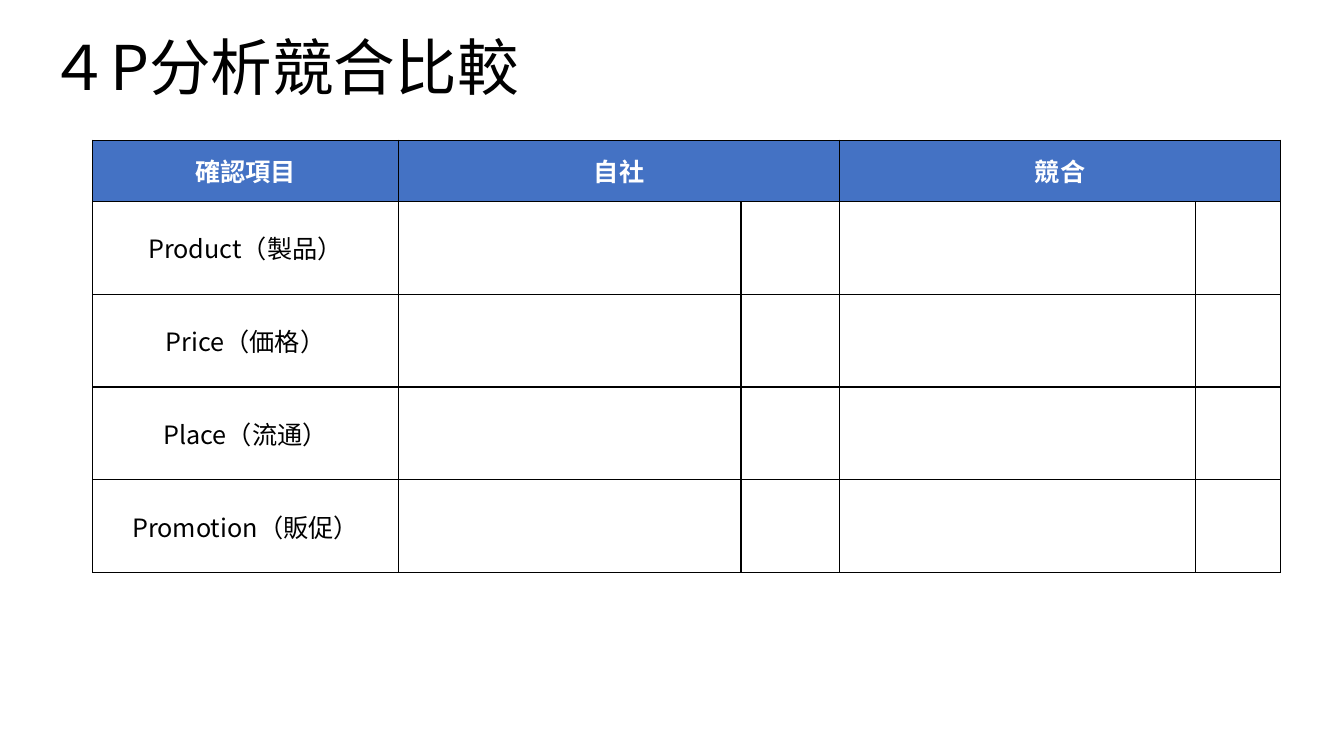
from pptx import Presentation
from pptx.dml.color import RGBColor
from pptx.enum.text import MSO_ANCHOR, PP_ALIGN
from pptx.oxml.ns import qn
from pptx.util import Inches, Pt
from lxml.etree import SubElement

FONT = "Noto Sans CJK JP"
BLACK = RGBColor(0x00, 0x00, 0x00)
WHITE = RGBColor(0xFF, 0xFF, 0xFF)
BLUE = RGBColor(0x44, 0x72, 0xC4)

COLUMN_WIDTHS = [3.03, 3.4, 0.98, 3.53, 0.84]
HEADER_HEIGHT = 0.61
ROW_HEIGHT = 0.92
HEADINGS = {0: "確認項目", 1: "自社", 3: "競合"}
FOUR_PS = ["Product（製品）", "Price（価格）", "Place（流通）", "Promotion（販促）"]


def write_text(frame, text, size=18, color=BLACK, bold=False,
               align=PP_ALIGN.CENTER, line_spacing=None):
    paragraph = frame.paragraphs[0]
    paragraph.alignment = align
    paragraph.line_spacing = line_spacing
    run = paragraph.add_run()
    run.text = text
    run.font.size = Pt(size)
    run.font.bold = bold
    run.font.color.rgb = color
    run.font.name = FONT
    # Japanese characters take the East Asian typeface
    SubElement(run.font._element, qn("a:ea"), typeface=FONT)


def add_title(slide, text):
    title = slide.shapes.title
    title.left, title.top = Inches(0.38), Inches(0.15)
    title.width, title.height = Inches(11.5), Inches(1.1)
    title.text_frame.vertical_anchor = MSO_ANCHOR.MIDDLE
    write_text(title.text_frame, text, size=44, align=PP_ALIGN.LEFT,
               line_spacing=0.9)


def format_cell(cell, fill):
    properties = cell._tc.get_or_add_tcPr()
    for side in ("lnL", "lnR", "lnT", "lnB"):
        border = SubElement(properties, qn(f"a:{side}"), w=str(Pt(1)))
        line_fill = SubElement(border, qn("a:solidFill"))
        SubElement(line_fill, qn("a:srgbClr"), val=str(BLACK))
    cell.fill.solid()
    cell.fill.fore_color.rgb = fill
    cell.vertical_anchor = MSO_ANCHOR.MIDDLE


def add_comparison_table(slide):
    row_heights = [HEADER_HEIGHT] + [ROW_HEIGHT] * len(FOUR_PS)
    comparison = slide.shapes.add_table(
        len(row_heights), len(COLUMN_WIDTHS), Inches(0.92), Inches(1.39),
        Inches(sum(COLUMN_WIDTHS)), Inches(sum(row_heights))).table
    for column, width in zip(comparison.columns, COLUMN_WIDTHS):
        column.width = Inches(width)

    # Grid and fills
    for index, (row, height) in enumerate(zip(comparison.rows, row_heights)):
        row.height = Inches(height)
        for cell in row.cells:
            format_cell(cell, BLUE if index == 0 else WHITE)

    # Own company and competitor each head two columns
    for column in (1, 3):
        comparison.cell(0, column).merge(comparison.cell(0, column + 1))
    for column, heading in HEADINGS.items():
        write_text(comparison.cell(0, column).text_frame, heading,
                   color=WHITE, bold=True)

    # Items to check
    for row, item in enumerate(FOUR_PS, start=1):
        write_text(comparison.cell(row, 0).text_frame, item)


def main():
    presentation = Presentation()
    presentation.slide_width = Inches(13.33)
    presentation.slide_height = Inches(7.5)
    slide = presentation.slides.add_slide(presentation.slide_layouts[5])
    add_title(slide, "４P分析競合比較")
    add_comparison_table(slide)
    presentation.save("out.pptx")


if __name__ == "__main__":
    main()
